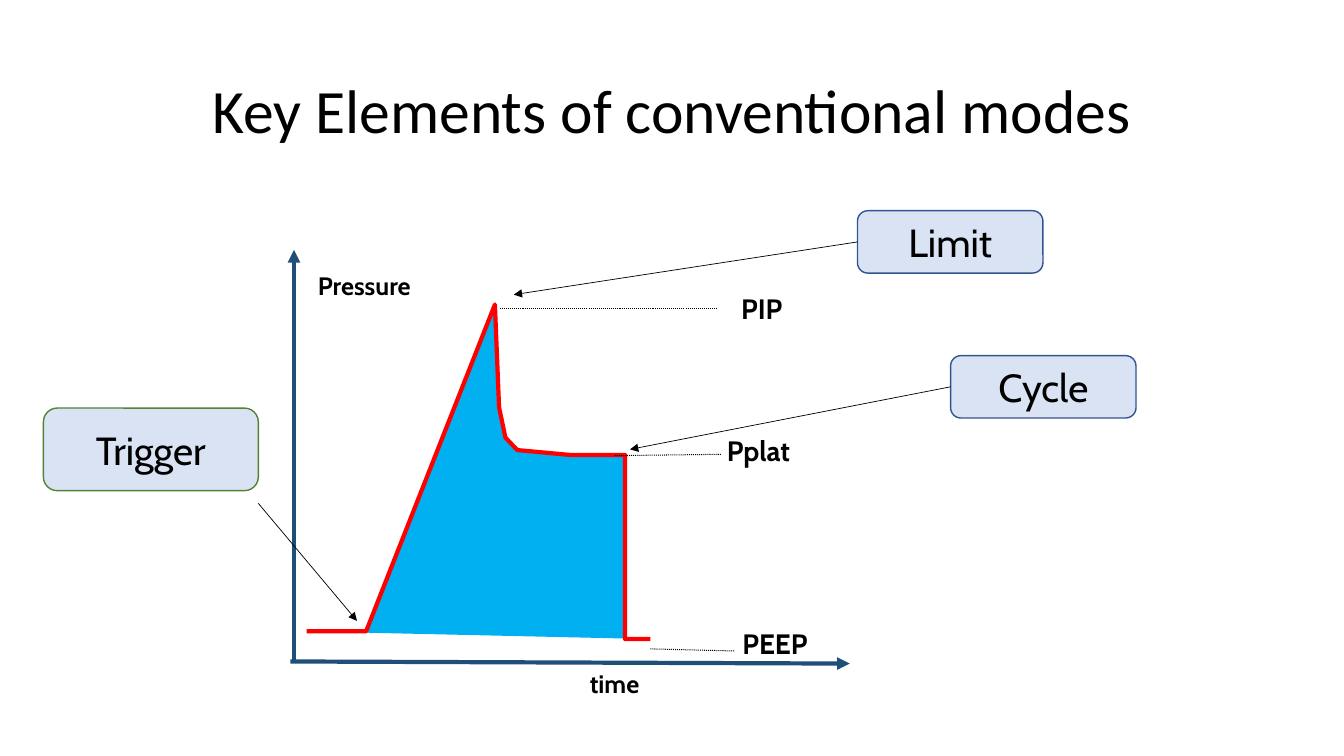
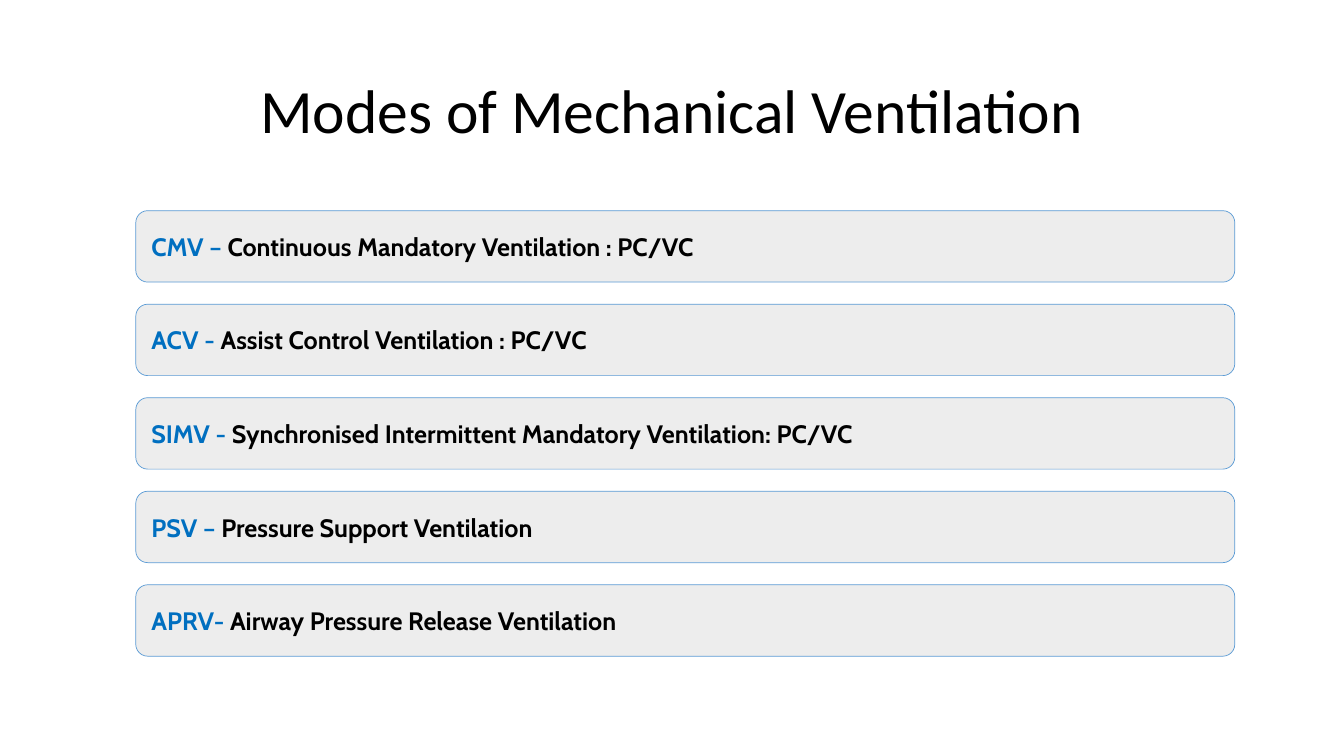
from lxml.etree import SubElement
from pptx import Presentation
from pptx.dml.color import RGBColor
from pptx.enum.dml import MSO_LINE
from pptx.enum.shapes import MSO_CONNECTOR, MSO_SHAPE
from pptx.enum.text import MSO_ANCHOR, PP_ALIGN
from pptx.oxml.ns import qn
from pptx.util import Pt

BLACK = "000000"
AXIS_BLUE = "1F4E79"
CALLOUT_FILL = "DAE3F3"
CALLOUT_LINE = "325491"
TRIGGER_LINE = "548235"
MODE_FILL = "EDEDED"
MODE_LINE = "5B9BD5"
MODE_BLUE = "006FC0"

TITLE_FONT = {"name": "Calibri", "size": Pt(44)}
AXIS_FONT = {"name": "Cabin", "size": Pt(18), "bold": True}
LEVEL_FONT = {"name": "Cabin", "size": Pt(20), "bold": True}
CALLOUT_FONT = {"name": "Cabin", "size": Pt(28)}


def paint(color, hex_color):
    """Give a fill, line fill or font a solid colour."""
    if hasattr(color, "solid"):
        color.solid()
        color = color.fore_color
    else:
        color = color.color
    color.rgb = RGBColor.from_string(hex_color)


def write(shape, runs, font_format, alignment):
    """Fill a shape with one centred line of (text, colour) runs."""
    frame = shape.text_frame
    frame.word_wrap = True
    frame.vertical_anchor = MSO_ANCHOR.MIDDLE
    paragraph = frame.paragraphs[0]
    paragraph.alignment = alignment
    for text, hex_color in runs:
        run = paragraph.add_run()
        run.text = text
        for attribute, value in font_format.items():
            setattr(run.font, attribute, value)
        paint(run.font, hex_color)


presentation = Presentation()
presentation.slide_width, presentation.slide_height = Pt(960), Pt(540)
title_only = presentation.slide_layouts[5]
layout_title = title_only.placeholders[0]
layout_title.left, layout_title.top = Pt(66), Pt(28.8)
layout_title.width, layout_title.height = Pt(828), Pt(104.4)

slides = []
for heading in ("Key Elements of conventional modes", "Modes of Mechanical Ventilation"):
    slide = presentation.slides.add_slide(title_only)
    write(slide.shapes.title, [(heading, BLACK)], TITLE_FONT, PP_ALIGN.CENTER)
    slide.shapes.title.text_frame.paragraphs[0].line_spacing = 0.9
    slides.append(slide)
elements, modes = slides

# Pressure curve
curve = [(219, 451), (261.5, 451), (353.5, 217.5), (356.5, 291), (361, 312.5),
         (369.5, 321.5), (407.5, 325), (446.5, 325), (446.5, 456.5), (464.5, 456.5)]
points = [(Pt(x), Pt(y)) for x, y in curve]
builder = elements.shapes.build_freeform(*points[0])
builder.add_line_segments(points[1:], close=False)
pressure_curve = builder.convert_to_shape()
pressure_curve.shadow.inherit = False
paint(pressure_curve.fill, "00B0F0")
paint(pressure_curve.line.fill, "FF0000")
pressure_curve.line.width = Pt(3)

# Axis and level labels
for text, left, top, width, height, font_format, alignment in (
    ("time", 412, 474, 54, 28.8, AXIS_FONT, PP_ALIGN.CENTER),
    ("Pressure", 214.5, 189.5, 91.5, 28.8, AXIS_FONT, PP_ALIGN.CENTER),
    ("PEEP", 517, 443.5, 67, 31.5, LEVEL_FONT, PP_ALIGN.RIGHT),
    ("PIP", 518.5, 204.5, 47.5, 31.5, LEVEL_FONT, PP_ALIGN.RIGHT),
    ("Pplat", 507.5, 306, 64, 31.5, LEVEL_FONT, PP_ALIGN.RIGHT),
):
    label = elements.shapes.add_textbox(Pt(left), Pt(top), Pt(width), Pt(height))
    write(label, [(text, BLACK)], font_format, alignment)

# Callouts
callouts = {}
for text, left, top, width, height, outline in (
    ("Trigger", 31, 291.5, 153.5, 59, TRIGGER_LINE),
    ("Limit", 612.5, 150.5, 132.5, 44.6, CALLOUT_LINE),
    ("Cycle", 679, 254, 132.5, 44.6, CALLOUT_LINE),
):
    callout = elements.shapes.add_shape(
        MSO_SHAPE.ROUNDED_RECTANGLE, Pt(left), Pt(top), Pt(width), Pt(height))
    callout.shadow.inherit = False
    paint(callout.fill, CALLOUT_FILL)
    paint(callout.line.fill, outline)
    callout.line.width = Pt(1)
    write(callout, [(text, BLACK)], CALLOUT_FONT, PP_ALIGN.CENTER)
    callouts[text] = callout

# Axes, dotted levels and callout arrows
AXIS = {"color": AXIS_BLUE, "width": 3, "dotted": False}
LEVEL = {"color": BLACK, "width": 0.75, "dotted": True}
POINTER = {"color": BLACK, "width": 0.5, "dotted": False}
for start, end, style, source in (
    ((207.5, 472.5), (607, 474), AXIS, None),
    ((210, 472.5), (210, 178.5), AXIS, None),
    ((357, 220.5), (512, 220.5), LEVEL, None),
    ((439, 325.5), (515.5, 324.5), LEVEL, None),
    ((464.5, 463.5), (525, 465), LEVEL, None),
    ((184.5, 359.5), (255, 443.5), POINTER, None),
    ((612.5, 172.8), (367, 210.5), POINTER, "Limit"),
    ((679, 276.3), (450, 321), POINTER, "Cycle"),
):
    line = elements.shapes.add_connector(
        MSO_CONNECTOR.STRAIGHT, *(Pt(value) for value in start + end))
    paint(line.line.fill, style["color"])
    line.line.width = Pt(style["width"])
    if source:
        line.begin_connect(callouts[source], 1)
    if style["dotted"]:
        line.line.dash_style = MSO_LINE.ROUND_DOT
    else:
        SubElement(line.line._get_or_add_ln(), qn("a:tailEnd"), type="triangle")
    SubElement(line._element.spPr, qn("a:effectLst"))

# Ventilation modes
for row, (short_name, full_name) in enumerate((
    ("CMV – ", "Continuous Mandatory Ventilation : PC/VC"),
    ("ACV - ", "Assist Control Ventilation : PC/VC"),
    ("SIMV - ", "Synchronised Intermittent Mandatory Ventilation: PC/VC"),
    ("PSV – ", "Pressure Support Ventilation"),
    ("APRV- ", "Airway Pressure Release Ventilation"),
)):
    bar = modes.shapes.add_shape(
        MSO_SHAPE.ROUNDED_RECTANGLE, Pt(97), Pt(150.5 + 66.8 * row), Pt(785), Pt(51))
    bar.shadow.inherit = False
    paint(bar.fill, MODE_FILL)
    paint(bar.line.fill, MODE_LINE)
    bar.line.width = Pt(0.5)
    write(bar, [(short_name, MODE_BLUE), (full_name, BLACK)], AXIS_FONT, PP_ALIGN.LEFT)
    bar.text_frame.margin_left = Pt(8.6)
    bar.text_frame.paragraphs[0].space_before = Pt(1.3)

presentation.save("out.pptx")
